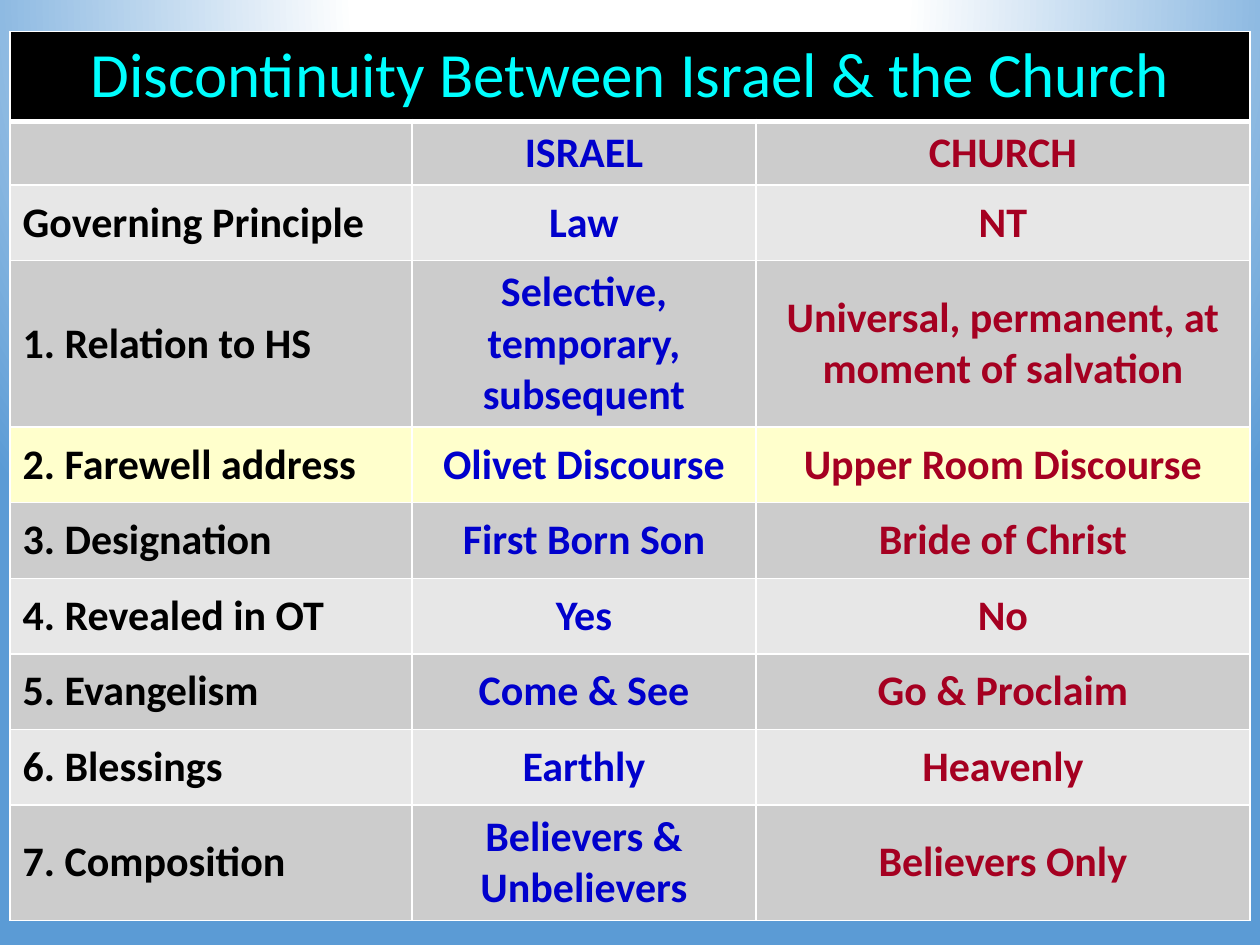
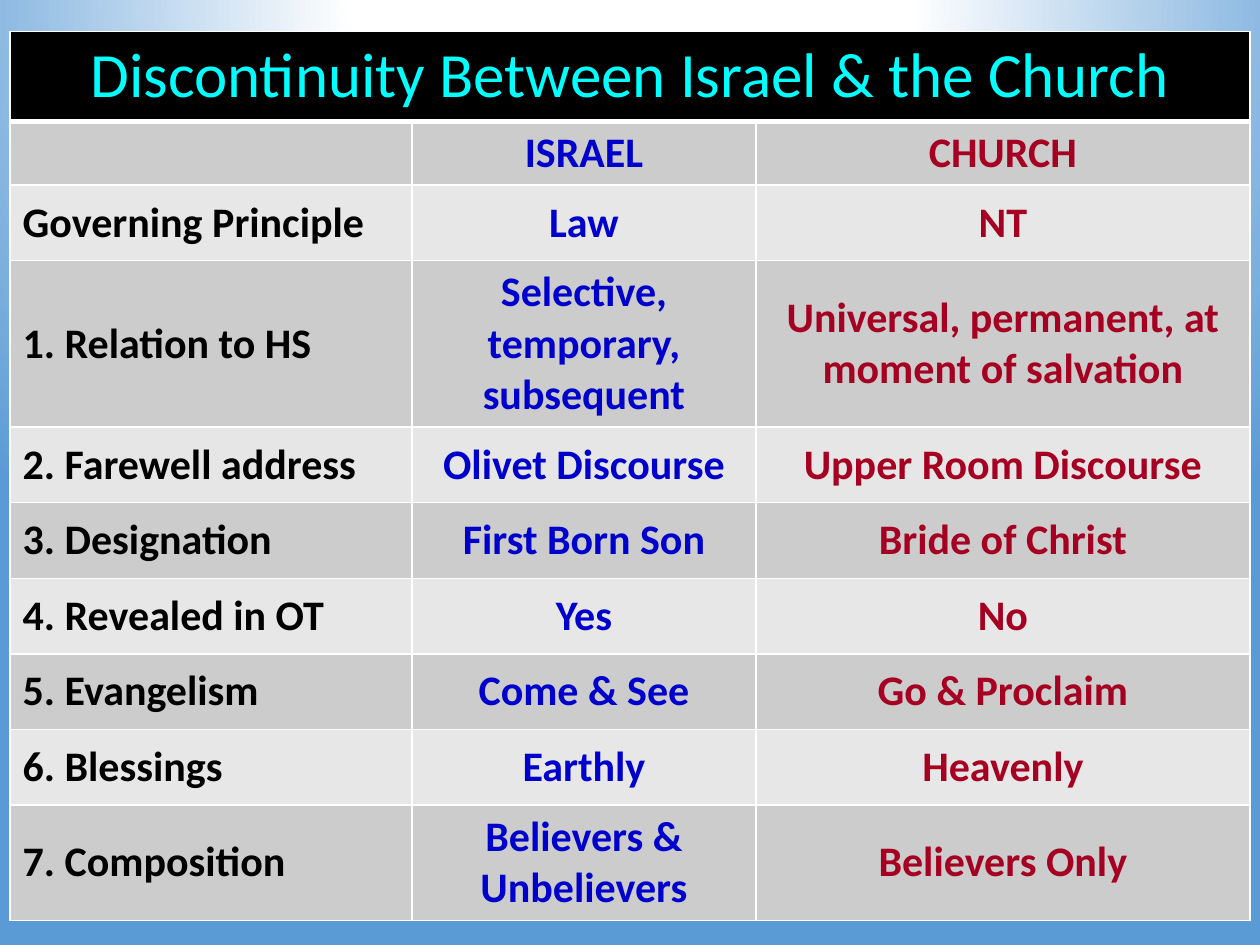
from pptx import Presentation
from pptx.dml.color import RGBColor
from pptx.enum.text import MSO_ANCHOR, PP_ALIGN
from pptx.oxml import parse_xml
from pptx.oxml.ns import nsdecls
from pptx.util import Inches, Pt

WHITE, BLACK, CYAN, SKY = "FFFFFF", "000000", "00FFFF", "5B9BD5"
BLUE, CRIMSON = "0000CC", "A50021"
DARK_BAND, LIGHT_BAND = "CCCCCC", "E7E7E7"
FAREWELL_ROW = 4
FAREWELL_FILLS = ["FFFFCC", "E7E6E6"]

TABLE_BOX = (0.08, 0.25, 9.83, 7)
COLUMN_WIDTHS = [3.19, 2.73, 3.92]
TITLE_HEIGHT, HEADING_HEIGHT, ROW_HEIGHT, TALL_HEIGHT = 0.7, 0.5, 0.6, 0.7
COLUMN_FORMATS = [(BLACK, PP_ALIGN.LEFT), (BLUE, PP_ALIGN.CENTER), (CRIMSON, PP_ALIGN.CENTER)]

TITLE = "Discontinuity Between Israel & the Church"
COMPARISON = [
    ("", "ISRAEL", "CHURCH"),
    ("Governing Principle", "Law", "NT"),
    ("1. Relation to HS", "Selective, temporary, subsequent",
     "Universal, permanent, at moment of salvation"),
    ("2. Farewell address", "Olivet Discourse", "Upper Room Discourse"),
    ("3. Designation", "First Born Son", "Bride of Christ"),
    ("4. Revealed in OT", "Yes", "No"),
    ("5. Evangelism", "Come & See", "Go & Proclaim"),
    ("6. Blessings", "Earthly", "Heavenly"),
    ("7. Composition", "Believers & Unbelievers", "Believers Only"),
]
TALL_TOPICS = {"1. Relation to HS", "7. Composition"}


def rgb(hex_color):
    """Turn a hex string into a colour."""
    return RGBColor.from_string(hex_color)


def set_background(master):
    """Give the master a white glow from above that fades to blue."""
    stops = "".join(
        f'<a:gs pos="{percent * 1000}"><a:srgbClr val="{color}"/></a:gs>'
        for percent, color in [(0, WHITE), (35, WHITE), (100, SKY)])
    glow = parse_xml(
        f'<p:bg {nsdecls("p", "a")}><p:bgPr><a:gradFill rotWithShape="1">'
        f'<a:gsLst>{stops}</a:gsLst><a:path path="circle">'
        '<a:fillToRect l="50000" t="-80000" r="50000" b="180000"/></a:path>'
        '</a:gradFill><a:effectLst/></p:bgPr></p:bg>')
    common = master.element.cSld
    for old in common.xpath("p:bg"):
        common.remove(old)
    common.insert(0, glow)


def set_borders(cell, top=1, bottom=1):
    """Draw white lines on the four sides of a cell."""
    properties = cell._tc.get_or_add_tcPr()
    for side, points in {"L": 1, "R": 1, "T": top, "B": bottom}.items():
        properties.append(parse_xml(
            f'<a:ln{side} {nsdecls("a")} w="{Pt(points)}"><a:solidFill>'
            f'<a:srgbClr val="{WHITE}"/></a:solidFill></a:ln{side}>'))


def fill_cell(cell, text, fill, color, align, size=24, bold=True):
    """Colour a cell and write its text."""
    cell.fill.solid()
    cell.fill.fore_color.rgb = rgb(fill)
    cell.vertical_anchor = MSO_ANCHOR.MIDDLE
    if not text:
        return
    paragraph = cell.text_frame.paragraphs[0]
    paragraph.alignment = align
    paragraph._p.get_or_add_pPr().insert(0, parse_xml(
        f'<a:spcBef {nsdecls("a")}><a:spcPct val="20000"/></a:spcBef>'))
    run = paragraph.add_run()
    run.text = text
    for attribute, value in {"name": "Calibri", "size": Pt(size), "bold": bold}.items():
        setattr(run.font, attribute, value)
    run.font.color.rgb = rgb(color)


def add_title_row(table):
    """Merge the top row into the black title band."""
    for cell in table.rows[0].cells:
        set_borders(cell, bottom=3)
    title = table.cell(0, 0)
    title.merge(table.cell(0, len(COLUMN_WIDTHS) - 1))
    fill_cell(title, TITLE, BLACK, CYAN, PP_ALIGN.CENTER, size=36, bold=False)
    table.rows[0].height = Inches(TITLE_HEIGHT)


def add_comparison(slide, box, farewell_fill):
    """Build the Israel and Church table in the given box."""
    table = slide.shapes.add_table(
        len(COMPARISON) + 1, len(COLUMN_WIDTHS), *map(Inches, box)).table
    table.first_row = table.horz_banding = False
    for column, width in zip(table.columns, COLUMN_WIDTHS):
        column.width = Inches(width)
    add_title_row(table)
    for index, topic in enumerate(COMPARISON, start=1):
        band = DARK_BAND if index % 2 else LIGHT_BAND
        fill = farewell_fill if index == FAREWELL_ROW else band
        height = TALL_HEIGHT if topic[0] in TALL_TOPICS else ROW_HEIGHT
        row = table.rows[index]
        row.height = Inches(HEADING_HEIGHT if index == 1 else height)
        for cell, text, (color, align) in zip(row.cells, topic, COLUMN_FORMATS):
            set_borders(cell, top=3 if index == 1 else 1)
            fill_cell(cell, text, fill, color, align)


def main():
    """Build and save the presentation."""
    deck = Presentation()
    deck.slide_width, deck.slide_height = Inches(10), Inches(7.5)
    set_background(deck.slide_master)
    blank = deck.slide_layouts.get_by_name("Blank")
    for farewell_fill in FAREWELL_FILLS:
        add_comparison(deck.slides.add_slide(blank), TABLE_BOX, farewell_fill)
    deck.save("out.pptx")


if __name__ == "__main__":
    main()
